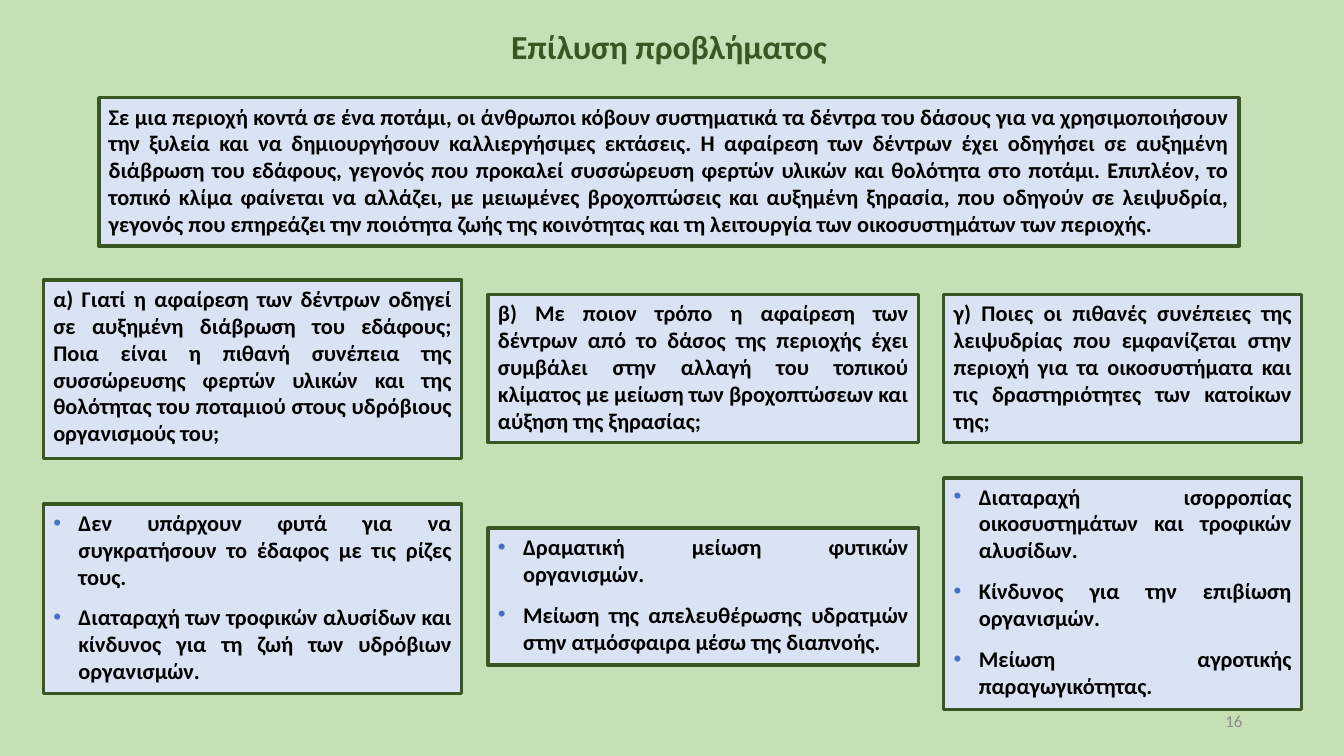
from dataclasses import dataclass

from lxml import etree
from pptx import Presentation
from pptx.dml.color import RGBColor
from pptx.enum.shapes import MSO_SHAPE
from pptx.enum.text import MSO_ANCHOR, MSO_AUTO_SIZE, PP_ALIGN
from pptx.oxml.ns import qn
from pptx.util import Inches, Pt

RECT = MSO_SHAPE.RECTANGLE
TOP, MIDDLE = MSO_ANCHOR.TOP, MSO_ANCHOR.MIDDLE
CENTER, RIGHT, JUSTIFY = PP_ALIGN.CENTER, PP_ALIGN.RIGHT, PP_ALIGN.JUSTIFY
NO_AUTOFIT = MSO_AUTO_SIZE.NONE

FONT = "Calibri"
GREEN, PALE_GREEN, PALE_BLUE = "385723", "C5E0B4", "DAE3F3"
BLUE, BLACK, GREY = "4472C4", "000000", "8C8C8C"


@dataclass
class Block:
    top: float
    height: float
    lines: list[str]


@dataclass
class Column:
    left: float
    width: float
    question: Block
    answer: Block


PROBLEM = Block(0.97, 1.47, [
    "Σε μια περιοχή κοντά σε ένα ποτάμι, οι άνθρωποι κόβουν συστηματικά τα δέντρα του δάσους "
    "για να χρησιμοποιήσουν την ξυλεία και να δημιουργήσουν καλλιεργήσιμες εκτάσεις. "
    "Η αφαίρεση των δέντρων έχει οδηγήσει σε αυξημένη διάβρωση του εδάφους, γεγονός που "
    "προκαλεί συσσώρευση φερτών υλικών και θολότητα στο ποτάμι. Επιπλέον, το τοπικό κλίμα "
    "φαίνεται να αλλάζει, με μειωμένες βροχοπτώσεις και αυξημένη ξηρασία, που οδηγούν σε "
    "λειψυδρία, γεγονός που επηρεάζει την ποιότητα ζωής της κοινότητας και τη λειτουργία "
    "των οικοσυστημάτων των περιοχής."])

COLUMNS = [
    Column(
        0.43, 4.15,
        Block(2.78, 1.77, [
            "α) Γιατί η αφαίρεση των δέντρων οδηγεί σε αυξημένη διάβρωση του εδάφους; "
            "Ποια είναι η πιθανή συνέπεια της συσσώρευσης φερτών υλικών και της θολότητας "
            "του ποταμιού στους υδρόβιους οργανισμούς του;"]),
        Block(5, 1.88, [
            "Δεν υπάρχουν φυτά για να συγκρατήσουν το έδαφος με τις ρίζες τους.",
            "Διαταραχή των τροφικών αλυσίδων και κίνδυνος για τη ζωή των υδρόβιων "
            "οργανισμών."])),
    Column(
        4.84, 4.27,
        Block(2.92, 1.47, [
            "β) Με ποιον τρόπο η αφαίρεση των δέντρων από το δάσος της περιοχής έχει "
            "συμβάλει στην αλλαγή του τοπικού κλίματος με μείωση των βροχοπτώσεων και "
            "αύξηση της ξηρασίας;"]),
        Block(5.24, 1.36, [
            "Δραματική μείωση φυτικών οργανισμών.",
            "Μείωση της απελευθέρωσης υδρατμών στην ατμόσφαιρα μέσω της διαπνοής."])),
    Column(
        9.36, 3.55,
        Block(2.92, 1.47, [
            "γ) Ποιες οι πιθανές συνέπειες της λειψυδρίας που εμφανίζεται στην περιοχή "
            "για τα οικοσυστήματα και τις δραστηριότητες των κατοίκων της;"]),
        Block(4.74, 2.3, [
            "Διαταραχή ισορροπίας οικοσυστημάτων και τροφικών αλυσίδων.",
            "Κίνδυνος για την επιβίωση οργανισμών.",
            "Μείωση αγροτικής παραγωγικότητας."])),
]


def rgb(color: str) -> RGBColor:
    return RGBColor.from_string(color)


def write(p, text: str, size: float, color: str, align, bold: bool = True) -> None:
    p.text = text
    p.alignment = align
    font = p.runs[0].font
    font.name, font.size, font.bold = FONT, Pt(size), bold
    font.color.rgb = rgb(color)


def add_bullet(p) -> None:
    pPr = p._p.get_or_add_pPr()
    pPr.set("marL", str(Inches(0.25)))
    pPr.set("indent", str(-Inches(0.25)))
    bullet_color = etree.SubElement(pPr, qn("a:buClr"))
    etree.SubElement(bullet_color, qn("a:srgbClr"), val=BLUE)
    etree.SubElement(pPr, qn("a:buFont"), typeface="Arial")
    etree.SubElement(pPr, qn("a:buChar"), char="•")


def add_box(slide, left: float, width: float, block: Block, bulleted: bool = False) -> None:
    sp = slide.shapes.add_shape(RECT, Inches(left), Inches(block.top),
                                Inches(width), Inches(block.height))
    sp.shadow.inherit = False
    sp.fill.solid()
    sp.fill.fore_color.rgb = rgb(PALE_BLUE)
    sp.line.color.rgb = rgb(GREEN)
    sp.line.width = Pt(2.5)
    tf = sp.text_frame
    tf.word_wrap = True
    tf.vertical_anchor = TOP
    for i, line in enumerate(block.lines):
        p = tf.add_paragraph() if i else tf.paragraphs[0]
        if bulleted:
            add_bullet(p)
        if i:
            p.space_before = Pt(10)
        write(p, line, 16, BLACK, JUSTIFY)


def add_title(slide, text: str) -> None:
    title = slide.shapes.title
    title.left, title.top = Inches(3.41), Inches(0.21)
    title.width, title.height = Inches(6.45), Inches(0.5)
    tf = title.text_frame
    tf.auto_size = NO_AUTOFIT
    tf.vertical_anchor = TOP
    write(tf.paragraphs[0], text, 24, GREEN, CENTER)


def add_page_number(slide, number: str) -> None:
    sp = slide.shapes.add_textbox(Inches(9.42), Inches(6.95), Inches(3), Inches(0.4))
    tf = sp.text_frame
    tf.word_wrap = True
    tf.vertical_anchor = MIDDLE
    write(tf.paragraphs[0], number, 12, GREY, RIGHT, bold=False)


def main() -> None:
    prs = Presentation()
    prs.slide_width, prs.slide_height = Inches(13.33), Inches(7.5)
    slide = prs.slides.add_slide(prs.slide_layouts[5])
    slide.background.fill.solid()
    slide.background.fill.fore_color.rgb = rgb(PALE_GREEN)

    add_page_number(slide, "16")
    add_title(slide, "Επίλυση προβλήματος")
    add_box(slide, 0.98, 11.31, PROBLEM)
    for column in COLUMNS:
        add_box(slide, column.left, column.width, column.question)
        add_box(slide, column.left, column.width, column.answer, bulleted=True)
    prs.save("out.pptx")


if __name__ == "__main__":
    main()
